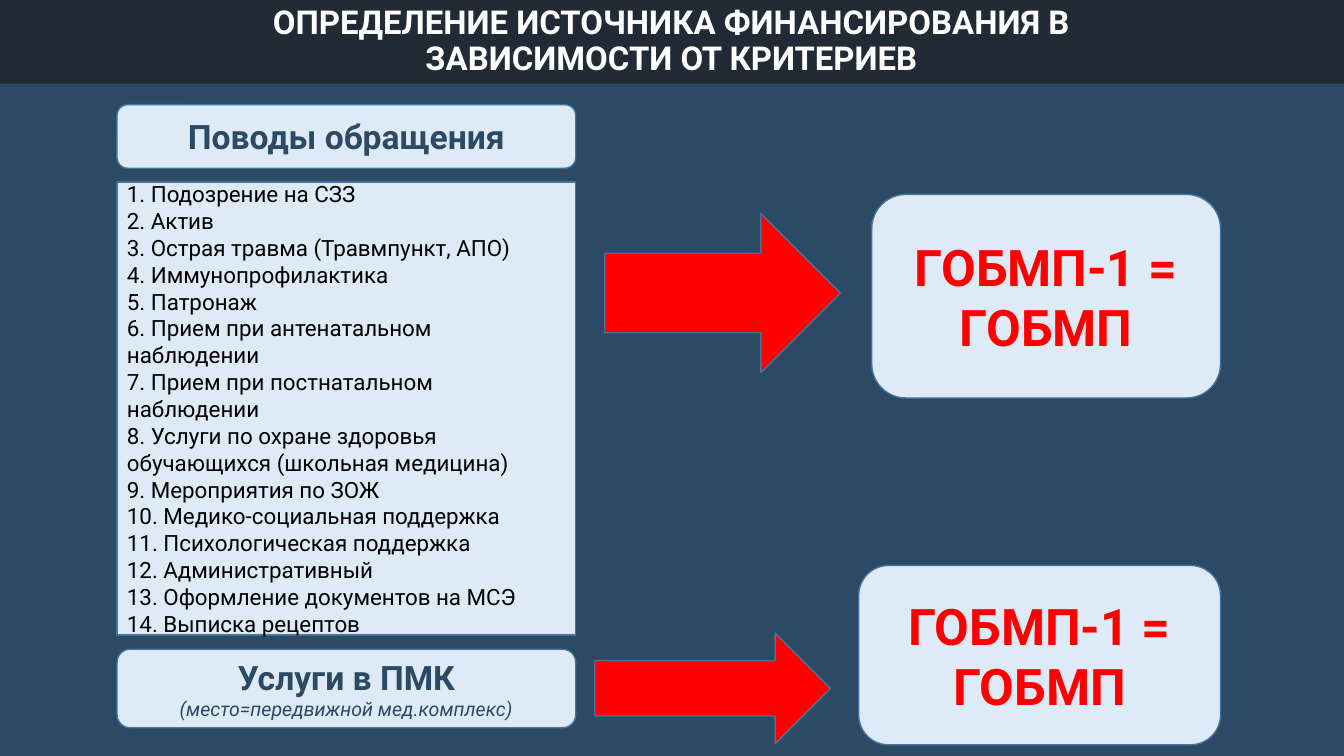
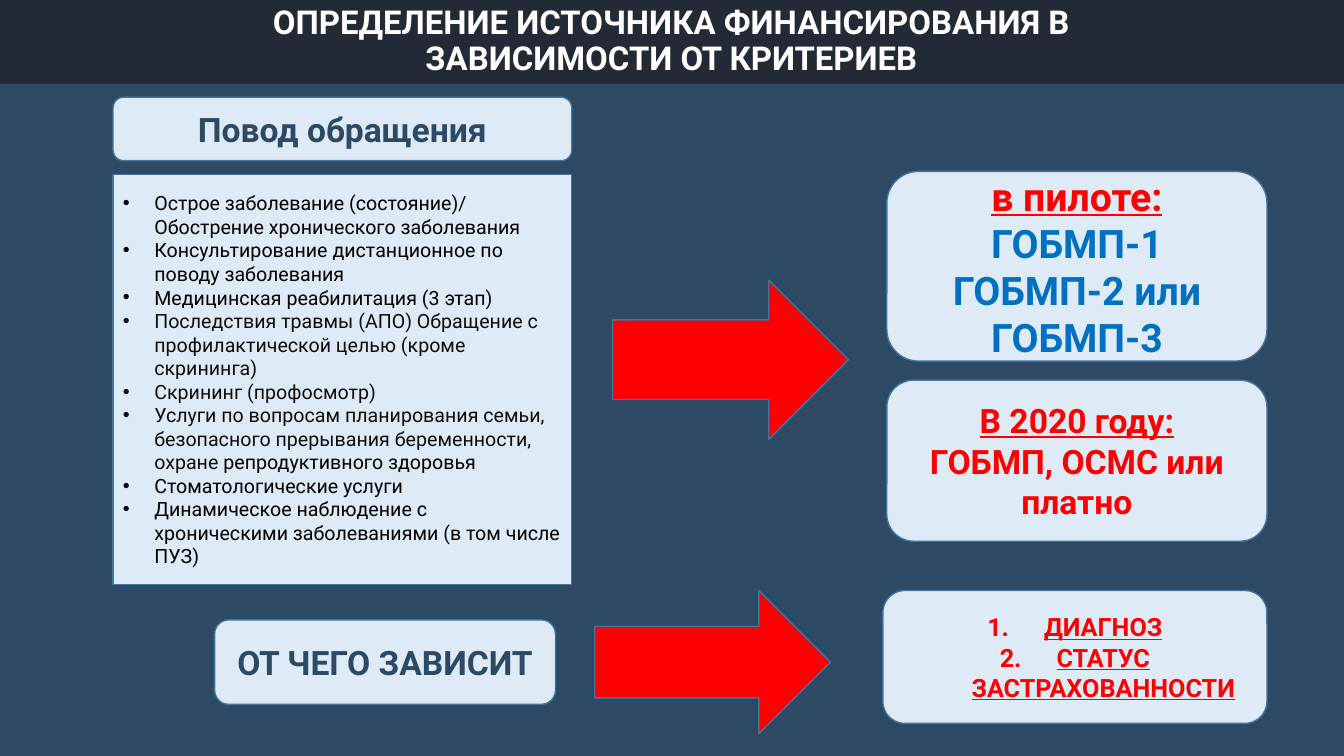
from dataclasses import dataclass, field

from lxml.etree import SubElement
from pptx import Presentation
from pptx.dml.color import RGBColor
from pptx.enum.shapes import MSO_SHAPE as Preset
from pptx.enum.text import MSO_ANCHOR as Anchor, PP_ALIGN as Align
from pptx.oxml.ns import qn
from pptx.util import Cm, Pt


@dataclass(frozen=True)
class Box:
    """A region of the slide, in centimetres."""
    left: float
    top: float
    width: float
    height: float

    def inner(self, dx, dy, width, height):
        return Box(self.left + dx, self.top + dy, width, height)

    def lengths(self):
        return [Cm(v) for v in (self.left, self.top, self.width, self.height)]


def text_style(size, color, **formats):
    return {"size": Pt(size), "color": color, "formats": formats}


@dataclass(frozen=True)
class Theme:
    font: str = "Roboto"
    backdrop: str = "2C4A64"
    band: str = "222A35"
    panel: str = "DEEBF7"
    outline: str = "43739E"
    arrow: str = "FF0000"
    text: dict = field(default_factory=lambda: {
        "title": text_style(23.5, "FFFFFF", bold=True),
        "heading": text_style(24, "2C4A64", bold=True),
        "note": text_style(14, "2C4A64", italic=True),
        "list": text_style(16, "000000"),
        "small list": text_style(14, "000000"),
        "soft list": text_style(14, "0D0D0D"),
        "source": text_style(36, "FF0000", bold=True),
        "pilot label": text_style(28, "FF0000", bold=True, underline=True),
        "pilot": text_style(28, "0070C0", bold=True),
        "year label": text_style(24, "FF0000", bold=True, underline=True),
        "year": text_style(24, "FF0000", bold=True),
        "factor": text_style(18, "FF0000", bold=True, underline=True),
    })
    # Bullet tag, its attributes and the hanging indent in centimetres
    bullets: dict = field(default_factory=lambda: {
        "dot": ("a:buChar", {"char": "•"}, 0.79),
        "number": ("a:buAutoNum", {"type": "arabicPeriod"}, 1.43),
    })


THEME = Theme()
SLIDE = Box(0, 0, 33.87, 19.05)
HEADER = Box(0, 0, SLIDE.width, 2.11)
TITLE = "ОПРЕДЕЛЕНИЕ ИСТОЧНИКА ФИНАНСИРОВАНИЯ В ЗАВИСИМОСТИ ОТ КРИТЕРИЕВ"

URGENT_REASONS = [
    "Подозрение на СЗЗ",
    "Актив",
    "Острая травма (Травмпункт, АПО)",
    "Иммунопрофилактика",
    "Патронаж",
    "Прием при антенатальном наблюдении",
    "Прием при постнатальном наблюдении",
    "Услуги по охране здоровья обучающихся (школьная медицина)",
    "Мероприятия по ЗОЖ",
    "Медико-социальная поддержка",
    "Психологическая поддержка",
    "Административный",
    "Оформление документов на МСЭ",
    "Выписка рецептов",
]
# Paragraphs are lists of (text, style) runs
OTHER_REASONS = [
    [("Острое заболевание (состояние)/ Обострение хронического заболевания",
      "small list")],
    [("Консультирование дистанционное по поводу заболевания", "small list")],
    [("Медицинская реабилитация (3 этап)", "small list")],
    [("Последствия травмы (АПО) Обращение с профилактической целью "
      "(кроме скрининга)", "soft list")],
    [("Скрининг (профосмотр)", "soft list")],
    [("Услуги по вопросам планирования семьи, безопасного прерывания "
      "беременности, охране ", "soft list"),
     ("репродуктивного здоровья", "small list")],
    [("Стоматологические услуги", "small list")],
    [("Динамическое наблюдение с хроническими заболеваниями "
      "(в том числе ПУЗ)", "small list")],
]
BASIC_SOURCE = [[("ГОБМП-1 =", "source")], [("ГОБМП", "source")]]
PILOT_SOURCES = [[("в пилоте:", "pilot label")], [("ГОБМП-1", "pilot")],
                 [("ГОБМП-2 или ГОБМП-3", "pilot")]]
YEAR_SOURCES = [[("В 2020 году:", "year label")],
                [("ГОБМП, ОСМС или платно", "year")]]
FACTORS = [[("ДИАГНОЗ", "factor")], [("СТАТУС ЗАСТРАХОВАННОСТИ", "factor")]]


# Text
def add_bullet(paragraph, kind):
    tag, attributes, indent = THEME.bullets[kind]
    properties = paragraph._p.get_or_add_pPr()
    properties.set("marL", str(Cm(indent)))
    properties.set("indent", str(-Cm(indent)))
    if kind == "dot":
        SubElement(properties, qn("a:buFont"), typeface="Arial")
    SubElement(properties, qn(tag), attributes)


def write(shape, paragraphs, align=Align.CENTER, bullet=None, spacing=None):
    frame = shape.text_frame
    frame.word_wrap = True
    frame.vertical_anchor = Anchor.MIDDLE
    for index, runs in enumerate(paragraphs):
        paragraph = frame.paragraphs[0] if index == 0 else frame.add_paragraph()
        paragraph.alignment = align
        if spacing:
            paragraph.line_spacing = spacing
        if bullet:
            add_bullet(paragraph, bullet)
        for text, style_name in runs:
            style = THEME.text[style_name]
            run = paragraph.add_run()
            run.text = text
            formats = {"name": THEME.font, "size": style["size"],
                       **style["formats"]}
            for attribute, value in formats.items():
                setattr(run.font, attribute, value)
            run.font.color.rgb = RGBColor.from_string(style["color"])


# Shapes
def block(slide, preset, box, fill, outline=THEME.outline):
    shape = slide.shapes.add_shape(preset, *box.lengths())
    shape.shadow.inherit = False
    shape.fill.solid()
    shape.fill.fore_color.rgb = RGBColor.from_string(fill)
    if outline:
        shape.line.color.rgb = RGBColor.from_string(outline)
        shape.line.width = Pt(1)
    else:
        shape.line.fill.background()
    return shape


def card(slide, box, paragraphs, bullet=None):
    panel = block(slide, Preset.ROUNDED_RECTANGLE, box, THEME.panel)
    write(panel, paragraphs, bullet=bullet)


# Regions
def header(slide, box):
    block(slide, Preset.RECTANGLE, box, THEME.band, outline=None)
    title_box = box.inner(4.34, 0.25, box.width - 8.7, 1.6)
    title = slide.shapes.add_textbox(*title_box.lengths())
    write(title, [[(TITLE, "title")]], spacing=0.9)


def reasons(slide, box, heading, items, bullet=None):
    """A heading card above the list of reasons for a visit."""
    heading_height, gap = 1.6, 0.35
    list_top = heading_height + gap
    list_box = box.inner(0, list_top, box.width, box.height - list_top)
    panel = block(slide, Preset.RECTANGLE, list_box, THEME.panel)
    write(panel, items, align=Align.LEFT, bullet=bullet)
    card(slide, box.inner(0, 0, box.width, heading_height),
         [[(heading, "heading")]])


def route(slide, box, arrow_top, arrow_height, cards_left, outcomes,
          bullet=None):
    """An arrow leading to a stack of outcomes, given as (height, text)."""
    arrow_width, gap = 5.94, 0.48
    block(slide, Preset.RIGHT_ARROW,
          box.inner(0, arrow_top, arrow_width, arrow_height), THEME.arrow)
    top = 0
    for height, paragraphs in outcomes:
        card(slide, box.inner(cards_left, top, box.width - cards_left, height),
             paragraphs, bullet)
        top += height + gap


# Slides
def new_slide(deck):
    slide = deck.slides.add_slide(deck.slide_layouts[6])
    block(slide, Preset.RECTANGLE, SLIDE, THEME.backdrop, outline=None)
    header(slide, HEADER)
    return slide


def basic_source_slide(deck):
    slide = new_slide(deck)
    numbered = [[(f"{number}. {reason}", "list")]
                for number, reason in enumerate(URGENT_REASONS, 1)]
    reasons(slide, Box(2.95, 2.64, 11.56, 13.36), "Поводы обращения", numbered)
    route(slide, Box(15.24, 4.9, 15.52, 5.13), 0.48, 4.01, 6.73,
          [(5.13, BASIC_SOURCE)])
    card(slide, Box(2.95, 16.36, 11.56, 1.98),
         [[("Услуги в ПМК", "heading")],
          [("(место=передвижной мед.комплекс)", "note")]])
    route(slide, Box(14.99, 14.25, 15.77, 4.52), 1.7, 2.79, 6.65,
          [(4.52, BASIC_SOURCE)])


def other_sources_slide(deck):
    slide = new_slide(deck)
    reasons(slide, Box(2.85, 2.45, 11.56, 12.28), "Повод обращения",
            OTHER_REASONS, bullet="dot")
    route(slide, Box(15.44, 4.32, 16.49, 9.32), 2.74, 4.01, 6.91,
          [(4.78, PILOT_SOURCES), (4.06, YEAR_SOURCES)])
    card(slide, Box(5.41, 15.62, 8.59, 2.13),
         [[("ОТ ЧЕГО ЗАВИСИТ", "heading")]])
    route(slide, Box(14.99, 14.88, 16.94, 3.61), 0, 3.61, 7.26,
          [(3.35, FACTORS)], bullet="number")


def main():
    deck = Presentation()
    deck.slide_width, deck.slide_height = Cm(SLIDE.width), Cm(SLIDE.height)
    basic_source_slide(deck)
    other_sources_slide(deck)
    deck.save("out.pptx")


if __name__ == "__main__":
    main()
